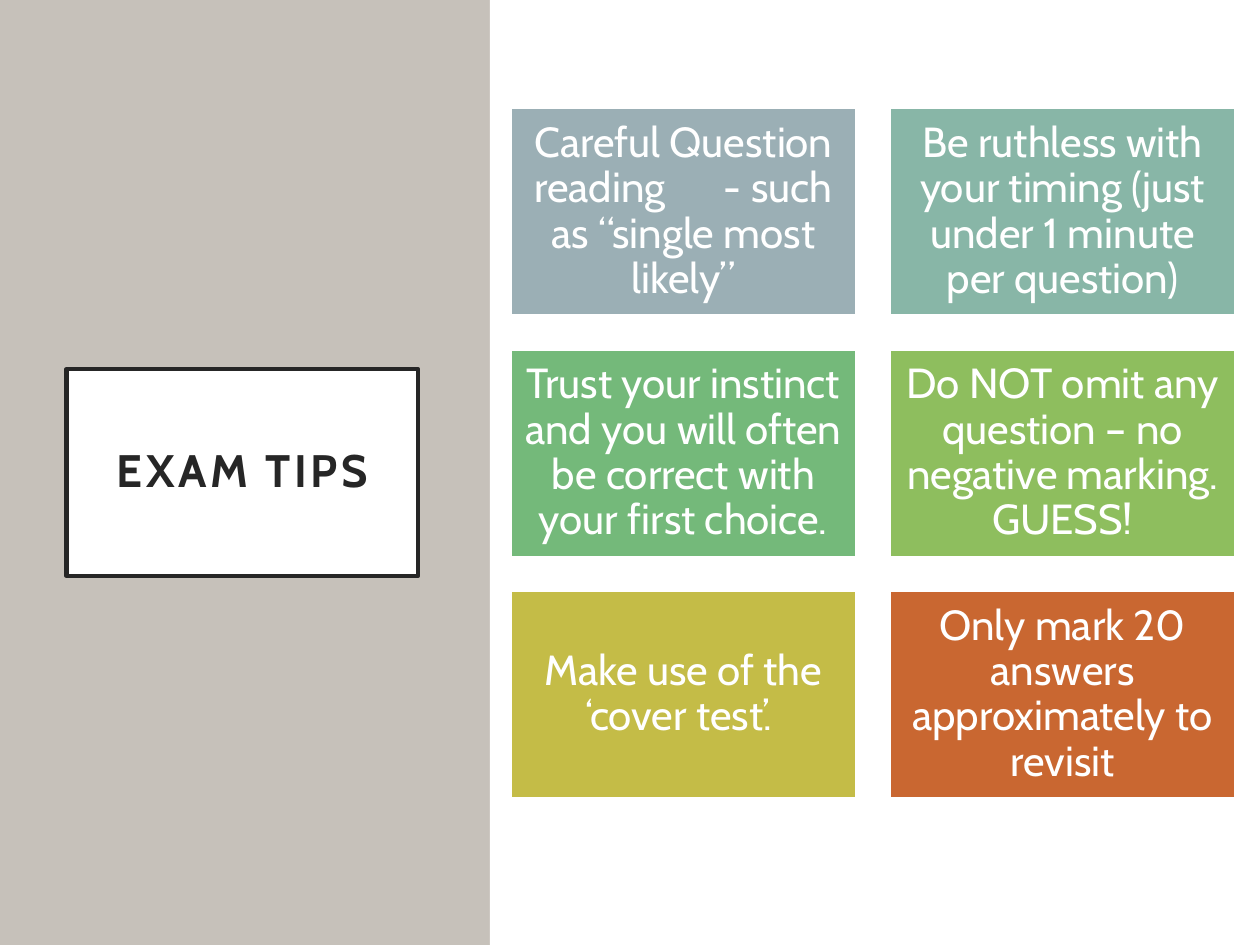
from dataclasses import dataclass

from pptx import Presentation
from pptx.dml.color import RGBColor
from pptx.enum import shapes, text
from pptx.util import Pt


@dataclass(frozen=True)
class Theme:
    font: str = "Cabin"
    ink: str = "262626"
    white: str = "FFFFFF"
    panel: str = "C6C1BA"
    tiles: tuple = ("9BAFB5", "88B6A7", "74B97A", "8EBE5E", "C4BC47", "C96731")
    title: int = 26
    body: int = 24


THEME = Theme()
WIDE, HIGH, SPLIT = 720, 540, 280
GAP = 28  # extra tracking, in points, that widens a single space

# Each tip is a list of (words, tracking) runs.
TIPS = [
    [("Careful Question reading", 0), (" ", GAP),
     ("- such as “single most likely”", 0)],
    [("Be ruthless with your timing (just under 1 minute per question)", 0)],
    [("Trust your instinct and you will often be correct with "
      "your first choice.", 0)],
    [("Do NOT omit any question – no negative marking. GUESS!", 0)],
    [("Make use of the ‘cover test’. ", 0)],
    [("Only mark 20 answers approximately to revisit", 0)],
]


def add_box(slide, box, fill, line=None, weight=1):
    shape = slide.shapes.add_shape(
        shapes.MSO_SHAPE.RECTANGLE, *(Pt(n) for n in box))
    shape.shadow.inherit = False
    shape.fill.solid()
    shape.fill.fore_color.rgb = RGBColor.from_string(fill)
    if line:
        shape.line.color.rgb = RGBColor.from_string(line)
        shape.line.width = Pt(weight)
    else:
        shape.line.fill.background()
    return shape


def add_text(shape, runs, size, color, inset, bold=False):
    """Centre the (words, tracking) runs in the shape."""
    frame = shape.text_frame
    frame.word_wrap = True
    frame.vertical_anchor = text.MSO_ANCHOR.MIDDLE
    frame.margin_left = frame.margin_right = Pt(inset)
    frame.margin_top = frame.margin_bottom = Pt(inset)
    para = frame.paragraphs[0]
    para.alignment = text.PP_ALIGN.CENTER
    para.line_spacing = 0.9
    for words, track in runs:
        run = para.add_run()
        run.text = words
        font = run.font
        font.name, font.size, font.bold = THEME.font, Pt(size), bold
        font.color.rgb = RGBColor.from_string(color)
        if track:
            run._r.get_or_add_rPr().set("spc", str(track * 100))


def add_panel(slide, box):
    left, top, _, _ = box
    add_box(slide, box, THEME.panel)
    title = add_box(slide, (left + 38, top + 211, 201, 118),
                    THEME.white, THEME.ink, 2.5)
    add_text(title, [("EXAM TIPS", 2)], THEME.title, THEME.ink, 14.4, True)


def add_tips(slide, box):
    """Lay the tips out in two columns, with gaps a tenth of a tile wide."""
    left, top, _, _ = box
    add_box(slide, box, THEME.white)
    wide = 197
    high, gap = wide * 0.6, wide * 0.1
    for i, (tip, fill) in enumerate(zip(TIPS, THEME.tiles)):
        row, col = divmod(i, 2)
        place = (left + 12 + col * (wide + gap),
                 top + 62 + row * (high + gap), wide, high)
        tile = add_box(slide, place, fill, THEME.white)
        add_text(tile, tip, THEME.body, THEME.white, 7.2)


def main():
    deck = Presentation()
    deck.slide_width, deck.slide_height = Pt(WIDE), Pt(HIGH)
    slide = deck.slides.add_slide(deck.slide_layouts[6])
    add_panel(slide, (0, 0, SPLIT, HIGH))
    add_tips(slide, (SPLIT, 0, WIDE - SPLIT, HIGH))
    deck.save("out.pptx")


if __name__ == "__main__":
    main()
